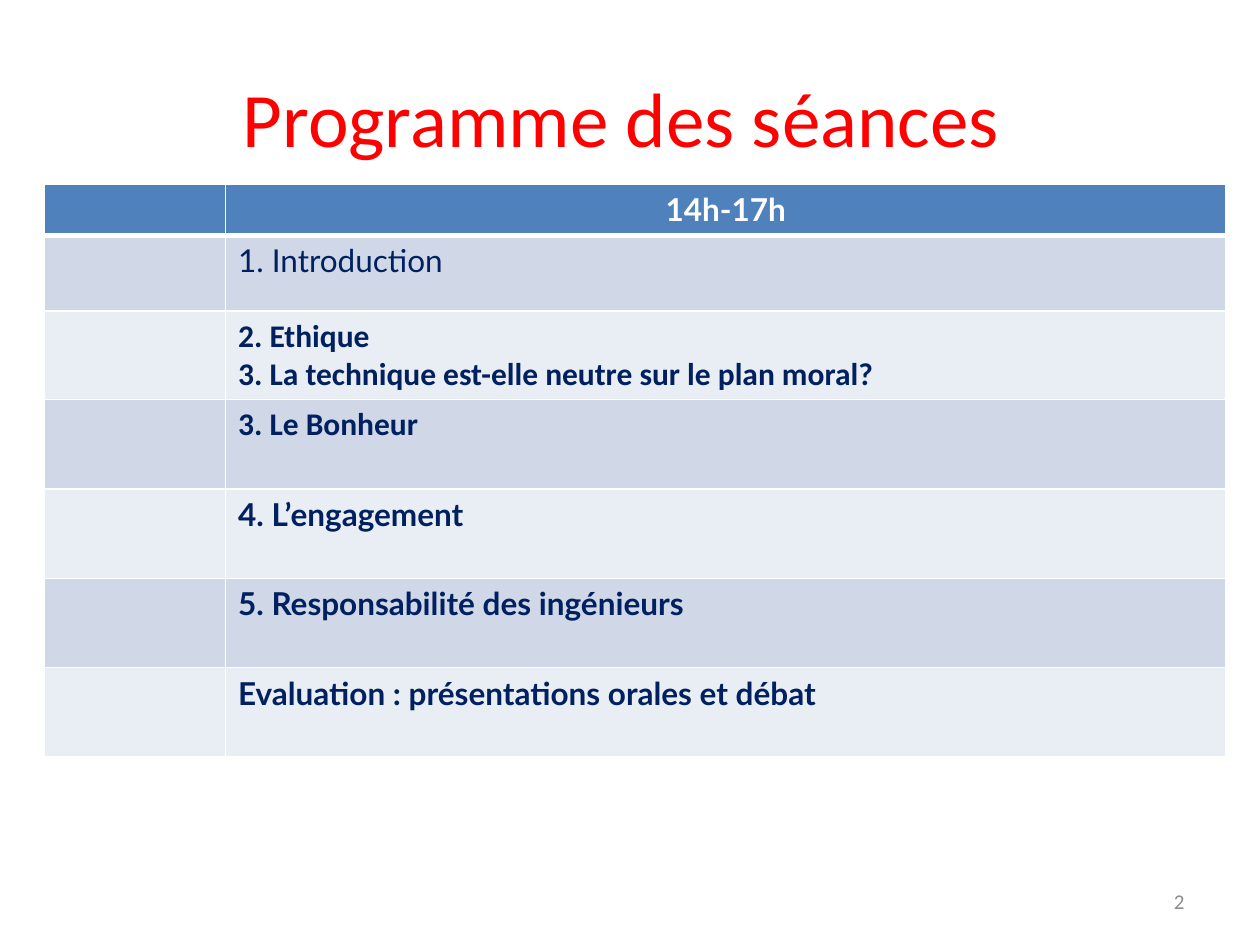
from dataclasses import dataclass

import pptx
import pptx.dml.color
import pptx.enum.text
import pptx.oxml.ns
import pptx.util
from lxml import etree

Inches, Pt = pptx.util.Inches, pptx.util.Pt
RGB = pptx.dml.color.RGBColor.from_string
ALIGN = pptx.enum.text.PP_ALIGN
MIDDLE = pptx.enum.text.MSO_ANCHOR.MIDDLE
qn = pptx.oxml.ns.qn


@dataclass(frozen=True)
class Theme:
    title: str = "FF0000"
    header: str = "4F81BD"
    bands: tuple = ("D0D8E8", "E9EDF4")
    ink: str = "002060"
    white: str = "FFFFFF"
    muted: str = "8C8C8C"
    font: str = "Calibri"
    accent_font: str = "Lato"
    title_size: int = 44
    body_size: int = 18
    small_size: int = 12


T = Theme()
W, H = 10, 7.5
TITLE = "Programme des séances "
PAGE = "2"
HEADER = "14h-17h"
# lines, font, bold
SESSIONS = [
    (["1. Introduction"], T.accent_font, False),
    (["2. Ethique", "3. La technique est-elle neutre sur le plan moral?"], T.font, True),
    (["3. Le Bonheur"], T.font, True),
    (["4. L’engagement"], T.accent_font, True),
    (["5. Responsabilité des ingénieurs"], T.accent_font, True),
    (["Evaluation : présentations orales et débat"], T.accent_font, True),
]
COLS = [1.44, 7.94]
ROWS = [0.41] + [0.6] * 2 + [0.71] * 4
TABLE_LEFT, TABLE_TOP = 0.35, 1.46


def write(tf, lines, font=T.font, size=T.body_size, color=T.ink, bold=False,
          align=ALIGN.LEFT):
    for i, line in enumerate(lines):
        p = tf.paragraphs[0] if i == 0 else tf.add_paragraph()
        p.alignment = align
        r = p.add_run()
        r.text = line
        r.font.name, r.font.size, r.font.bold = font, Pt(size), bold
        r.font.color.rgb = RGB(color)


def style_cell(cell, fill, top=1, bottom=1):
    """Set the fill and white borders, with top and bottom widths in points."""
    tc_pr = cell._tc.get_or_add_tcPr()
    for side, width in (("L", 1), ("R", 1), ("T", top), ("B", bottom)):
        ln = etree.SubElement(tc_pr, qn(f"a:ln{side}"), w=str(Pt(width)))
        solid = etree.SubElement(ln, qn("a:solidFill"))
        etree.SubElement(solid, qn("a:srgbClr"), val=T.white)
    cell.fill.solid()
    cell.fill.fore_color.rgb = RGB(fill)


def add_title(s):
    sp = s.shapes.title
    sp.left, sp.top, sp.width, sp.height = map(Inches, (0.05 * W, 0.04 * H, 0.9 * W, 1.25))
    sp.text_frame.vertical_anchor = MIDDLE
    write(sp.text_frame, [TITLE], size=T.title_size, color=T.title, align=ALIGN.CENTER)


def add_programme(s):
    box = map(Inches, (TABLE_LEFT, TABLE_TOP, sum(COLS), sum(ROWS)))
    table = s.shapes.add_table(len(ROWS), len(COLS), *box).table
    for col, width in zip(table.columns, COLS):
        col.width = Inches(width)
    for row, height in zip(table.rows, ROWS):
        row.height = Inches(height)
    for i, row in enumerate(table.rows):
        fill = T.bands[(i - 1) % 2] if i else T.header
        for cell in row.cells:
            style_cell(cell, fill, top=3 if i == 1 else 1, bottom=1 if i else 3)
    write(table.cell(0, 1).text_frame, [HEADER], font=T.accent_font, color=T.white,
          bold=True, align=ALIGN.CENTER)
    for i, (lines, font, bold) in enumerate(SESSIONS, 1):
        write(table.cell(i, 1).text_frame, lines, font=font, bold=bold)


def add_page_number(s):
    width, height = 2.33, 0.4
    sp = s.shapes.add_textbox(*map(Inches, (0.95 * W - width, 6.95, width, height)))
    tf = sp.text_frame
    tf.word_wrap = True
    tf.vertical_anchor = MIDDLE
    write(tf, [PAGE], size=T.small_size, color=T.muted, align=ALIGN.RIGHT)


def main():
    prs = pptx.Presentation()
    prs.slide_width, prs.slide_height = Inches(W), Inches(H)
    s = prs.slides.add_slide(prs.slide_layouts[5])
    add_title(s)
    add_page_number(s)
    add_programme(s)
    prs.save("out.pptx")


if __name__ == "__main__":
    main()
